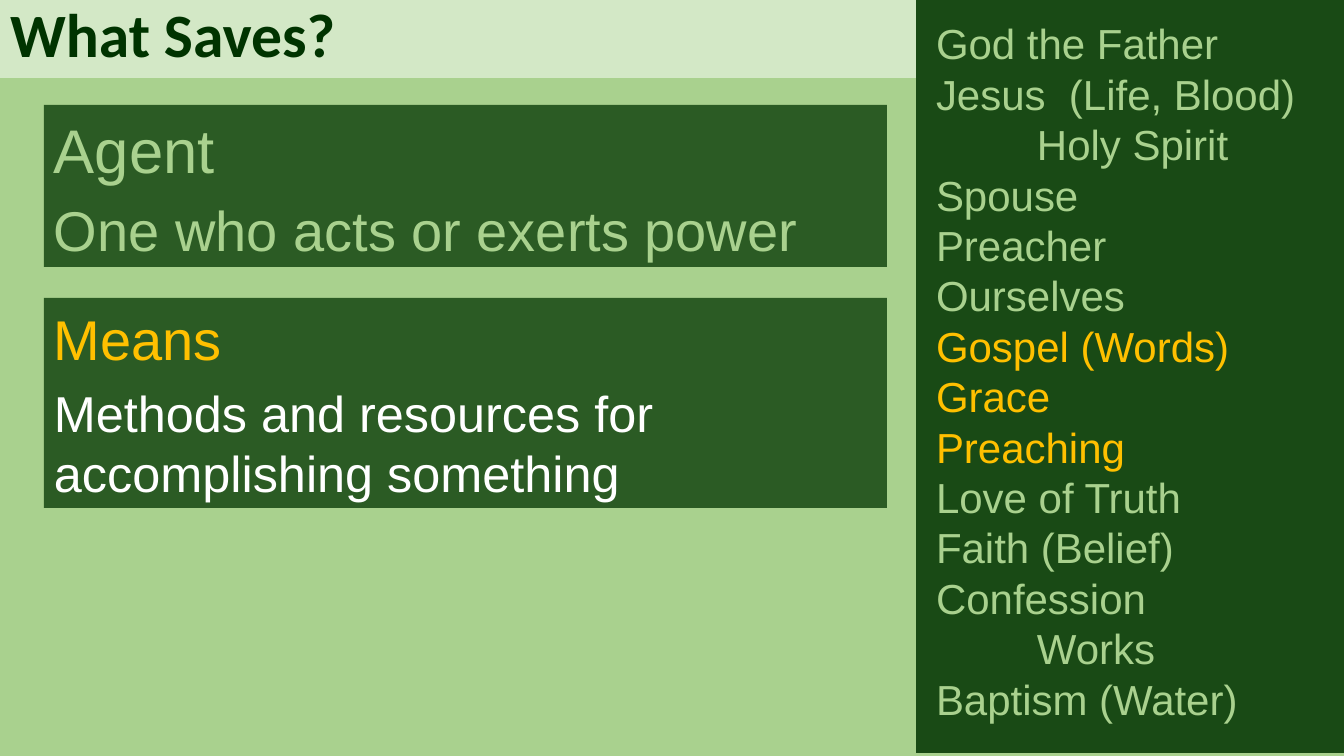
from lxml import etree
from pptx import Presentation
from pptx import util as u
from pptx.dml.color import RGBColor
from pptx.enum import shapes, text
from pptx.oxml.ns import qn

PX = 914400 / 100.8
COLORS = {
    "leaf": "A9D18E",
    "pale": "E2F0D9",
    "forest": "003300",
    "gold": "FFC000",
    "white": "FFFFFF",
}
TAB_STOPS = (101, 133)
ANSWERS = [
    ("God the Father", "leaf"),
    ("Jesus\t(Life, Blood)", "leaf"),
    ("\tHoly Spirit", "leaf"),
    ("Spouse", "leaf"),
    ("Preacher", "leaf"),
    ("Ourselves", "leaf"),
    ("Gospel (Words)", "gold"),
    ("Grace", "gold"),
    ("Preaching", "gold"),
    ("Love of Truth", "leaf"),
    ("Faith (Belief)", "leaf"),
    ("Confession", "leaf"),
    ("\tWorks", "leaf"),
    ("Baptism (Water)", "leaf"),
]
DEFINITIONS = [
    ((44, 105, 843, 162),
     [("Agent", 44, "leaf"), ("One who acts or exerts power", 40, "leaf")]),
    ((44, 298, 843, 210),
     [("Means", 40, "gold"),
      ("Methods and resources for accomplishing something", 36, "white")]),
]


def px(length):
    return u.Emu(round(length * PX))


def rgb(name):
    return RGBColor.from_string(COLORS[name])


def apply(target, values):
    for name, value in values.items():
        setattr(target, name, value)


def place(shape, box):
    apply(shape, dict(zip(("left", "top", "width", "height"), map(px, box))))


def paint(shape, color, opacity):
    shape.fill.solid()
    shape.fill.fore_color.rgb = rgb(color)
    tint = shape.fill._xPr.find(qn("a:solidFill"))[0]
    etree.SubElement(tint, qn("a:alpha"), val=str(opacity * 1000))
    shape.line.fill.background()


def write(para, words, size, color, font="Arial", bold=False):
    span = para.add_run()
    span.text = words
    apply(span.font, {"name": font, "size": u.Pt(size), "bold": bold})
    span.font.color.rgb = rgb(color)


def add_tabs(para):
    stops = etree.SubElement(para._p.get_or_add_pPr(), qn("a:tabLst"))
    for stop in TAB_STOPS:
        etree.SubElement(stops, qn("a:tab"), pos=str(px(stop)), algn="l")


def add_panel(page, box, opacity, insets, lines, gap=0, tabbed=False):
    panel = page.shapes.add_shape(shapes.MSO_SHAPE.RECTANGLE, *map(px, box))
    panel.shadow.inherit = False
    paint(panel, "forest", opacity)
    frame = panel.text_frame
    left, top = insets
    apply(frame, {
        "word_wrap": True,
        "vertical_anchor": text.MSO_ANCHOR.TOP,
        "margin_left": px(left),
        "margin_top": px(top),
        "margin_right": px(10),
        "margin_bottom": px(5),
    })
    for index, (words, size, color) in enumerate(lines):
        para = frame.add_paragraph() if index else frame.paragraphs[0]
        apply(para, {
            "alignment": text.PP_ALIGN.LEFT,
            "line_spacing": u.Pt(round(size * 1.2, 1)),
            "space_before": u.Pt(gap if index else 0),
        })
        if tabbed:
            add_tabs(para)
        write(para, words, size, color)


def add_title(page, box):
    title = page.shapes.title
    place(title, box)
    paint(title, "pale", 75)
    apply(title.text_frame, {
        "word_wrap": True,
        "auto_size": text.MSO_AUTO_SIZE.NONE,
        "vertical_anchor": text.MSO_ANCHOR.MIDDLE,
    })
    para = title.text_frame.paragraphs[0]
    apply(para, {"alignment": text.PP_ALIGN.LEFT, "line_spacing": 0.9})
    write(para, "What Saves?", 44, "forest", "Calibri", True)


def add_answers(page, box):
    lines = [(words, 30, color) for words, color in ANSWERS]
    add_panel(page, box, 85, (20, 21), lines, tabbed=True)


def add_definitions(page):
    for box, lines in DEFINITIONS:
        add_panel(page, box, 74, (10, 7), lines, gap=7)


def main():
    deck = Presentation()
    apply(deck, {"slide_width": px(1344), "slide_height": px(756)})
    page = deck.slides.add_slide(deck.slide_layouts[5])
    page.background.fill.solid()
    page.background.fill.fore_color.rgb = rgb("leaf")
    add_title(page, (0, -3, 916, 78 + 3))
    add_answers(page, (916, -3, 428, 756))
    add_definitions(page)
    deck.save("out.pptx")


if __name__ == "__main__":
    main()
